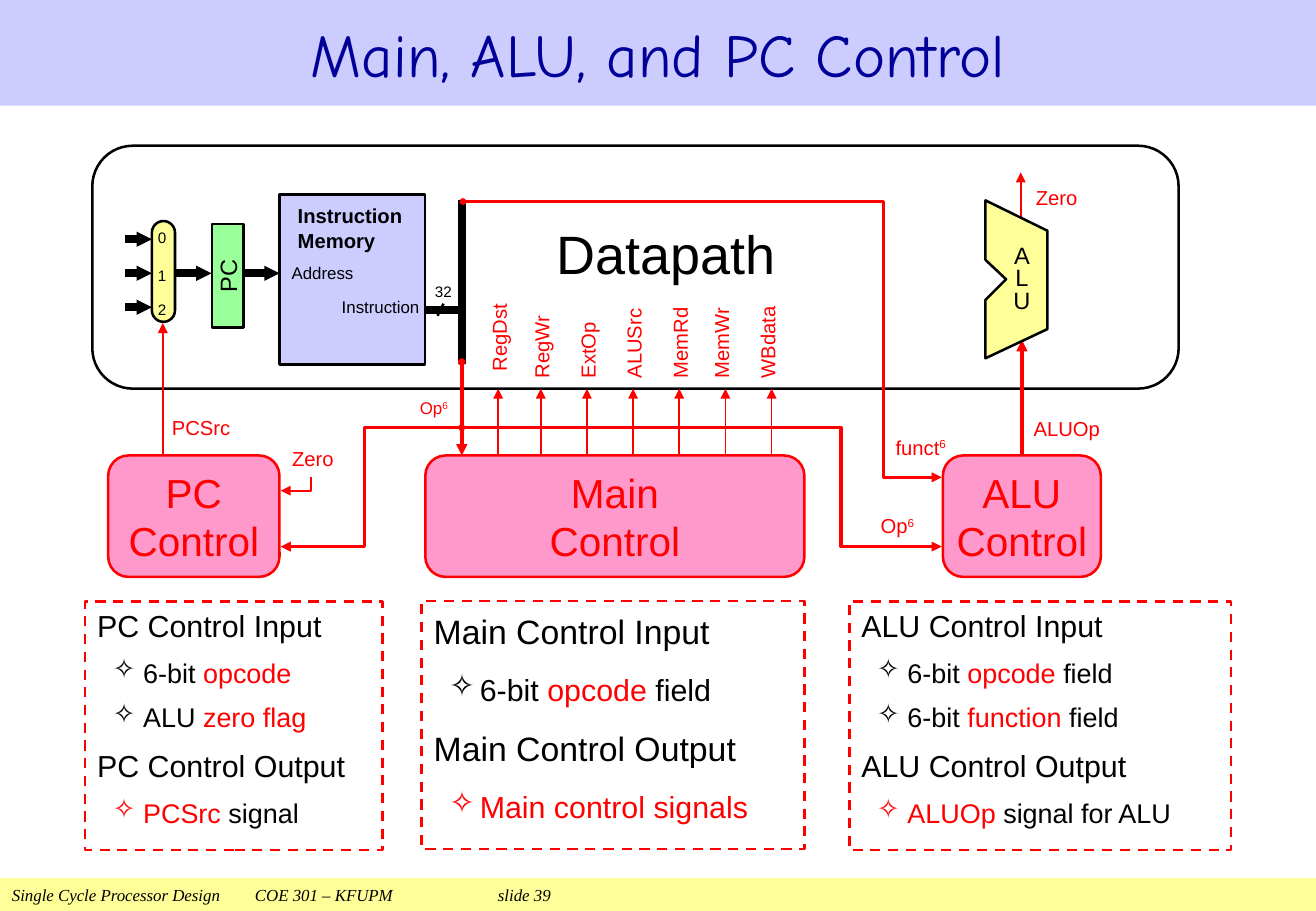
from dataclasses import dataclass
from typing import NamedTuple

from lxml.etree import SubElement
from pptx import Presentation
from pptx.dml.color import RGBColor
from pptx.enum.dml import MSO_LINE
from pptx.enum.shapes import MSO_CONNECTOR, MSO_SHAPE
from pptx.enum.text import MSO_ANCHOR, PP_ALIGN
from pptx.oxml.ns import qn
from pptx.util import Inches, Pt


@dataclass(frozen=True)
class Theme:
    black: str = "000000"
    red: str = "FF0000"
    navy: str = "000099"
    lavender: str = "CCCCFF"
    yellow: str = "FFFF99"
    green: str = "99FF99"
    pink: str = "FF99CC"
    body_font: str = "Arial"
    title_font: str = "Comic Neue"
    footer_font: str = "Times New Roman"
    title: int = 36
    datapath: int = 32
    control: int = 24
    unit: int = 14
    signal: int = 12
    port: int = 10
    tiny: int = 9
    outline: float = 1.5
    bus: float = 4.5
    wire: float = 2
    thin: float = 1


T = Theme()
LEFT, CENTER, RIGHT = PP_ALIGN.LEFT, PP_ALIGN.CENTER, PP_ALIGN.RIGHT


class Box(NamedTuple):
    left: float
    top: float
    width: float
    height: float


class Run(NamedTuple):
    text: str
    color: str = T.black
    raised: bool = False


class Signal(NamedTuple):
    name: str
    x: float
    label_x: float
    label_y: float = 2.73


class Label(NamedTuple):
    box: Box
    lines: list
    size: int = T.signal
    align: PP_ALIGN = CENTER
    bold: bool = False


class Wire(NamedTuple):
    points: list
    color: str = T.red
    width: float = T.wire
    tail: str = "triangle"
    head: str = ""
    tail_size: str = "med"


class Block(NamedTuple):
    kind: MSO_SHAPE
    box: Box
    fill: str = ""
    line: str = T.black
    corner: float = 0.167


class Panel(NamedTuple):
    box: Box
    heading_size: int
    item_size: int
    spacing: float
    lines: list  # a plain string is a heading, a list of runs is a bullet


deck = Presentation()
deck.slide_width, deck.slide_height = Inches(10.83), Inches(7.5)
slide = deck.slides.add_slide(deck.slide_layouts[6])


def add_line_text(paragraph, runs, size, font=T.body_font, bold=False, italic=False) -> None:
    for part in runs:
        run = paragraph.add_run()
        run.text = part.text
        run.font.name, run.font.size = font, Pt(size)
        run.font.bold, run.font.italic = bold, italic
        run.font.color.rgb = RGBColor.from_string(part.color)
        if part.raised:
            run._r.get_or_add_rPr().set("baseline", "30000")


def write(shape, lines, size, align=CENTER, margin=0.0, spacing=1.0, **style) -> None:
    """Fill a shape with vertically centred lines, each a list of runs."""
    frame = shape.text_frame
    frame.word_wrap, frame.vertical_anchor = True, MSO_ANCHOR.MIDDLE
    frame.margin_left = frame.margin_right = Inches(margin)
    frame.margin_top = frame.margin_bottom = 0
    for i, runs in enumerate(lines):
        paragraph = frame.add_paragraph() if i else frame.paragraphs[0]
        paragraph.alignment, paragraph.line_spacing = align, spacing
        add_line_text(paragraph, runs, size, **style)


def text_box(box: Box):
    return slide.shapes.add_textbox(*map(Inches, box))


def add_block(block: Block):
    shape = slide.shapes.add_shape(block.kind, *map(Inches, block.box))
    if block.kind == MSO_SHAPE.ROUNDED_RECTANGLE:
        shape.adjustments[0] = block.corner
    paint(shape, block.fill, block.line)
    return shape


def paint(shape, fill: str, line: str, width: float = T.outline) -> None:
    shape.shadow.inherit = False
    if fill:
        shape.fill.solid()
        shape.fill.fore_color.rgb = RGBColor.from_string(fill)
    else:
        shape.fill.background()
    if line:
        shape.line.color.rgb = RGBColor.from_string(line)
        shape.line.width = Pt(width)
    else:
        shape.line.fill.background()


def add_outline(points, closed: bool):
    (x, y), *rest = [(Inches(px), Inches(py)) for px, py in points]
    builder = slide.shapes.build_freeform(x, y)
    builder.add_line_segments(rest, close=closed)
    return builder.convert_to_shape()


def add_wire(wire: Wire) -> None:
    if len(wire.points) == 2:
        ends = [Inches(value) for point in wire.points for value in point]
        shape = slide.shapes.add_connector(MSO_CONNECTOR.STRAIGHT, *ends)
        shape.line.color.rgb = RGBColor.from_string(wire.color)
        shape.line.width = Pt(wire.width)
        SubElement(shape._element.spPr, qn("a:effectLst"))
    else:
        shape = add_outline(wire.points, closed=False)
        paint(shape, "", wire.color, wire.width)
    ln = shape.line._get_or_add_ln()
    for tag, kind, size in (("a:headEnd", wire.head, "sm"), ("a:tailEnd", wire.tail, wire.tail_size)):
        if kind:
            SubElement(ln, qn(tag), type=kind, w=size, len=size)


def add_label(label: Label) -> None:
    write(text_box(label.box), label.lines, label.size, label.align, bold=label.bold)


def add_panel(panel: Panel) -> None:
    shape = add_block(Block(MSO_SHAPE.RECTANGLE, panel.box, line=T.red))
    shape.line.dash_style = MSO_LINE.DASH
    frame = shape.text_frame
    frame.word_wrap, frame.vertical_anchor = True, MSO_ANCHOR.TOP
    for i, line in enumerate(panel.lines):
        paragraph = frame.add_paragraph() if i else frame.paragraphs[0]
        heading = isinstance(line, str)
        size = panel.heading_size if heading else panel.item_size
        paragraph.alignment, paragraph.line_spacing = LEFT, panel.spacing
        paragraph.space_before = Pt(round(0.46 * size * panel.spacing, 1) if i else 0)
        add_line_text(paragraph, [Run(line)] if heading else line, size)
        if not heading:
            properties = paragraph._p.get_or_add_pPr()
            properties.set("marL", str(Inches(0.38)))
            properties.set("indent", str(Inches(-0.25)))
            SubElement(properties, qn("a:buChar"), char="✧")


def red(text: str) -> Run:
    return Run(text, T.red)


SIX = Run("6", T.red, raised=True)
RECT, ROUND = MSO_SHAPE.RECTANGLE, MSO_SHAPE.ROUNDED_RECTANGLE
SIGNALS = [
    Signal("RegDst", 4.1, 4.1, 2.67), Signal("RegWr", 4.45, 4.45), Signal("ExtOp", 4.83, 4.83),
    Signal("ALUSrc", 5.21, 5.21), Signal("MemRd", 5.59, 5.59), Signal("MemWr", 5.97, 5.93),
    Signal("WBdata", 6.35, 6.31),
]
MUX_INPUTS = [1.97, 2.25, 2.53]
BUS_WIRES = [
    Wire([(3.5, 2.55), (3.8, 2.55)], T.black, T.bus, ""),
    Wire([(3.65, 2.5), (3.6, 2.6)], T.black, T.outline, ""),
    Wire([(3.8, 1.65), (3.8, 3)], T.black, T.bus, ""),
    *[Wire([(x, y), (end, y)], T.black, T.bus, tail_size="sm")
      for x, end, y in [(2, 2.3, 2.25), (1.44, 1.74, 2.25)] + [(1.03, 1.25, y) for y in MUX_INPUTS]],
]
CONTROL_WIRES = [
    Wire([(3.8, 2.98), (3.8, 3.75)], width=2.25, head="oval"),
    *[Wire([(s.x, 3.75), (s.x, 3.2)], width=T.thin) for s in SIGNALS],
    Wire([(8.4, 1.82), (8.4, 1.42)], width=T.thin),
    Wire([(3.8, 3.52), (6.92, 3.52), (6.92, 4.5), (7.75, 4.5)], head="oval"),
    Wire([(8.41, 3.75), (8.41, 2.8)], width=2.25),
    Wire([(3.81, 1.66), (7.27, 1.66), (7.27, 3.93), (7.75, 3.93)], head="oval"),
    Wire([(3.8, 3.52), (3, 3.52), (3, 4.5), (2.31, 4.5)]),
    Wire([(1.34, 3.75), (1.34, 2.66)], width=1.25),
    Wire([(2.56, 3.93), (2.56, 4.04), (2.31, 4.04)], width=T.thin),
]
LABELS = [
    Label(Box(4.2, 1.82, 2.57, 0.52), [[Run("Datapath")]], T.datapath),
    Label(Box(3.58, 2.3, 0.2, 0.2), [[Run("32")]], T.tiny, LEFT),
    Label(Box(2.4, 2.1, 0.75, 0.3), [[Run("Address")]], T.port, LEFT),
    Label(Box(2.5, 2.4, 0.95, 0.25), [[Run("Instruction")]], T.port, RIGHT),
    Label(Box(2.45, 1.6, 0.95, 0.55), [[Run("Instruction")], [Run("Memory")]], T.signal, LEFT, True),
    Label(Box(3.42, 3.23, 0.3, 0.26), [[red("Op"), SIX]], T.port),
    Label(Box(7.06, 4.2, 0.65, 0.25), [[red("Op"), SIX]]),
    Label(Box(8.46, 3.4, 0.64, 0.25), [[red("ALUOp")]]),
    Label(Box(7.37, 3.56, 0.48, 0.24), [[red("funct"), SIX]], align=LEFT),
    Label(Box(8.45, 1.5, 0.49, 0.25), [[red("Zero")]]),
    Label(Box(1.3, 3.39, 0.71, 0.25), [[red("PCSrc")]]),
    Label(Box(2.33, 3.65, 0.49, 0.25), [[red("Zero")]]),
    *[Label(Box(1.3, y - 0.01, 0.17, 0.15), [[Run(digit)]], T.tiny, LEFT)
      for digit, y in zip("012", (1.89, 2.2, 2.48))],
]
CONTROLS = [("PC", 0.89, 1.41), ("Main", 3.5, 3.12), ("ALU", 7.76, 1.3)]
ALU_OUTLINE = [(8.11, 2.95), (8.62, 2.71), (8.62, 1.9), (8.11, 1.65), (8.11, 2.14), (8.28, 2.3), (8.11, 2.47)]
PANELS = [
    Panel(Box(0.7, 4.95, 2.45, 2.05), 18, 16, 1, [
        "PC Control Input", [Run("6-bit "), red("opcode")], [Run("ALU "), red("zero flag")],
        "PC Control Output", [red("PCSrc"), Run(" signal")]]),
    Panel(Box(3.47, 4.95, 3.15, 2.04), 20, 18, 1.1, [
        "Main Control Input", [Run("6-bit "), red("opcode"), Run(" field")],
        "Main Control Output", [red("Main control signals")]]),
    Panel(Box(6.99, 4.95, 3.14, 2.05), 18, 16, 1, [
        "ALU Control Input", [Run("6-bit "), red("opcode "), Run("field")],
        [Run("6-bit "), red("function "), Run("field")],
        "ALU Control Output", [red("ALUOp "), Run("signal for ALU")]]),
]


def add_bands() -> None:
    footer = add_block(Block(RECT, Box(0, 7.23, 10.83, 0.27), T.yellow, ""))
    write(footer, [[Run("Single Cycle Processor Design\tCOE 301 – KFUPM\tslide 39")]], T.port, LEFT,
          margin=0.1, font=T.footer_font, italic=True)
    tabs = SubElement(footer.text_frame.paragraphs[0]._p.get_or_add_pPr(), qn("a:tabLst"))
    for stop in (2, 4):
        SubElement(tabs, qn("a:tab"), pos=str(Inches(stop)), algn="l")
    title = add_block(Block(RECT, Box(0, 0, 10.83, 0.87), T.lavender, ""))
    write(title, [[Run("Main, ALU, and PC Control", T.navy)]], T.title, font=T.title_font)


def add_diagram() -> None:
    add_block(Block(ROUND, Box(0.76, 1.2, 8.94, 2)))
    add_block(Block(RECT, Box(2.3, 1.6, 1.2, 1.4), T.lavender))
    add_block(Block(ROUND, Box(1.25, 1.82, 0.19, 0.83), T.yellow, corner=0.5))
    counter = add_block(Block(RECT, Box(1.45, 2.14, 0.85, 0.26), T.green))
    counter.rotation = 270
    write(counter, [[Run("PC")]], T.unit)
    for wire in BUS_WIRES + CONTROL_WIRES:
        add_wire(wire)
    for name, left, width in CONTROLS:
        control = add_block(Block(ROUND, Box(left, 3.75, width, 1), T.pink, T.red))
        write(control, [[red(name)], [red("Control")]], T.control)
    paint(add_outline(ALU_OUTLINE, closed=True), T.yellow, T.black)
    write(text_box(Box(8.2, 1.9, 0.42, 0.81)), [[Run(letter)] for letter in "ALU"], T.unit, spacing=0.8)
    for label in LABELS:
        add_label(label)
    for signal in SIGNALS:
        name = text_box(Box(signal.label_x - 0.38, signal.label_y - 0.1, 0.77, 0.2))
        name.rotation = 270
        write(name, [[red(signal.name)]], T.signal, LEFT)


def main() -> None:
    add_bands()
    add_diagram()
    for panel in PANELS:
        add_panel(panel)
    deck.save("out.pptx")


if __name__ == "__main__":
    main()
